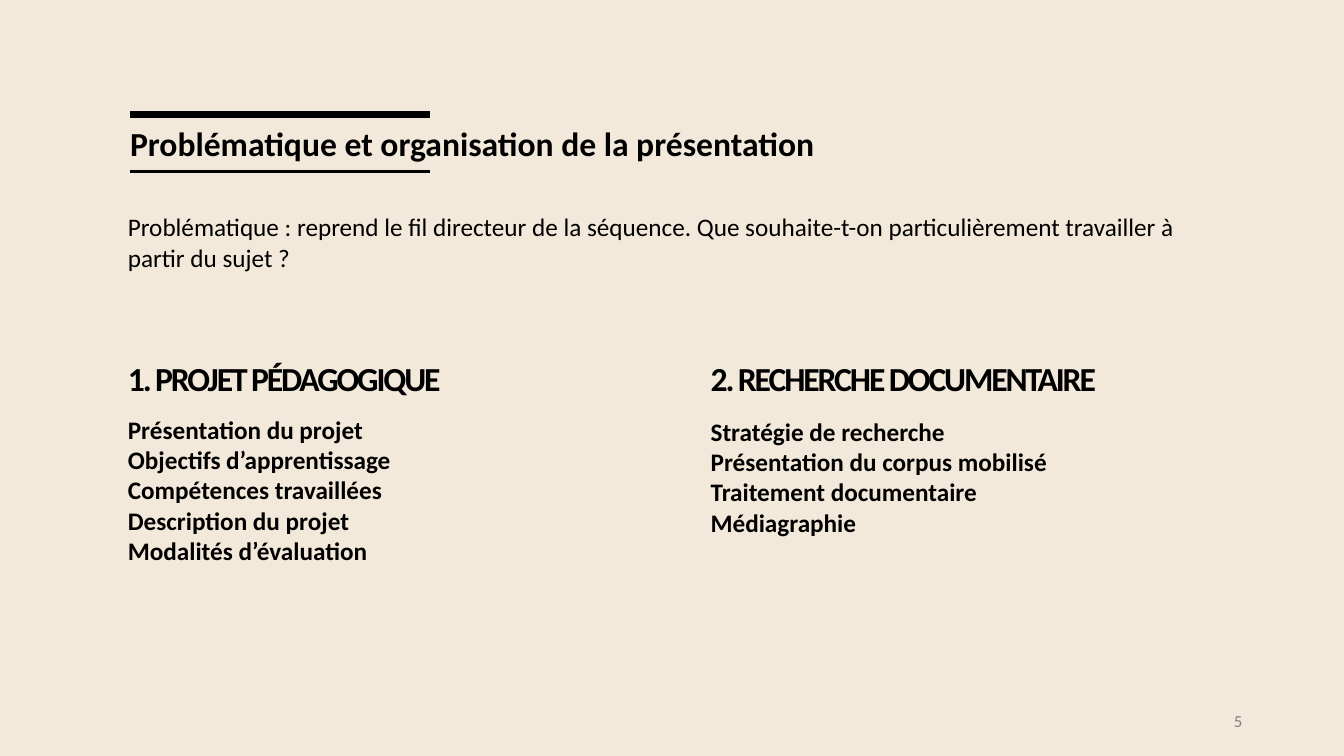
"""Build the slide that states the guiding question and the two-part outline."""
from dataclasses import dataclass

from lxml.etree import SubElement
from pptx import Presentation
from pptx.dml.color import RGBColor
from pptx.enum.shapes import MSO_CONNECTOR
from pptx.enum.text import MSO_ANCHOR, PP_ALIGN
from pptx.oxml.ns import qn
from pptx.util import Inches, Pt


@dataclass(frozen=True)
class Theme:
    font: str = "Calibri"
    background: RGBColor = RGBColor(0xF3, 0xE9, 0xDB)
    ink: RGBColor = RGBColor(0, 0, 0)
    muted: RGBColor = RGBColor(0x80, 0x80, 0x80)
    heading: int = 24
    body: int = 18
    number: int = 12
    tracking: int = -150


theme = Theme()


def place(shape, left, top, width, height):
    shape.left, shape.top = Inches(left), Inches(top)
    shape.width, shape.height = Inches(width), Inches(height)


def write(shape, lines, size, bold=False, color=theme.ink, align=PP_ALIGN.LEFT,
          anchor=MSO_ANCHOR.TOP, wrap=False, tracking=None):
    frame = shape.text_frame
    frame.word_wrap = wrap
    frame.vertical_anchor = anchor
    for index, line in enumerate(lines):
        paragraph = frame.add_paragraph() if index else frame.paragraphs[0]
        paragraph.alignment = align
        run = paragraph.add_run()
        run.text = line
        run.font.name = theme.font
        run.font.size = Pt(size)
        run.font.bold = bold
        run.font.color.rgb = color
        if tracking is not None:
            run.font._element.set("spc", str(tracking))


presentation = Presentation()
presentation.slide_width = Inches(13.33)
presentation.slide_height = Inches(7.5)
slide = presentation.slides.add_slide(presentation.slide_layouts[5])
slide.background.fill.solid()
slide.background.fill.fore_color.rgb = theme.background
shapes = slide.shapes

title = shapes.title
place(title, 1.29, 1.22, 6.86, 0.4)
frame = title.text_frame
frame.margin_left = frame.margin_top = frame.margin_right = frame.margin_bottom = 0
write(title, ["Problématique et organisation de la présentation"], theme.heading, bold=True)

for top, weight in ((1.7, 2), (1.14, 5)):
    rule = shapes.add_connector(
        MSO_CONNECTOR.STRAIGHT, Inches(1.29), Inches(top), Inches(4.27), Inches(top))
    rule.line.color.rgb = theme.ink
    rule.line.width = Pt(weight)
    SubElement(rule._element.spPr, qn("a:effectLst"))

sections = [
    (1.17, 4.06, 3.33, "1. PROJET PÉDAGOGIQUE",
     ["Présentation du projet", "Objectifs d’apprentissage", "Compétences travaillées",
      "Description du projet", "Modalités d’évaluation"]),
    (6.95, 4.08, 4.07, "2. RECHERCHE DOCUMENTAIRE",
     ["Stratégie de recherche", "Présentation du corpus mobilisé",
      "Traitement documentaire", "Médiagraphie"]),
]
for left, list_top, width, heading, topics in sections:
    heading_box = shapes.add_textbox(Inches(left), Inches(3.5), Inches(width), Inches(0.5))
    write(heading_box, [heading], theme.heading, bold=True, tracking=theme.tracking)
    topic_box = shapes.add_textbox(
        Inches(left), Inches(list_top), Inches(width), Inches(0.1 + 0.3 * len(topics)))
    write(topic_box, topics, theme.body, bold=True)

question = shapes.add_textbox(Inches(1.17), Inches(2.05), Inches(11.1), Inches(0.71))
write(question, ["Problématique : reprend le fil directeur de la séquence. "
                 "Que souhaite-t-on particulièrement travailler à partir du sujet ?"],
      theme.body, wrap=True)

page_number = shapes.add_textbox(Inches(9.42), Inches(6.95), Inches(3), Inches(0.4))
write(page_number, ["5"], theme.number, color=theme.muted, align=PP_ALIGN.RIGHT,
      anchor=MSO_ANCHOR.MIDDLE, wrap=True)

presentation.save("out.pptx")
